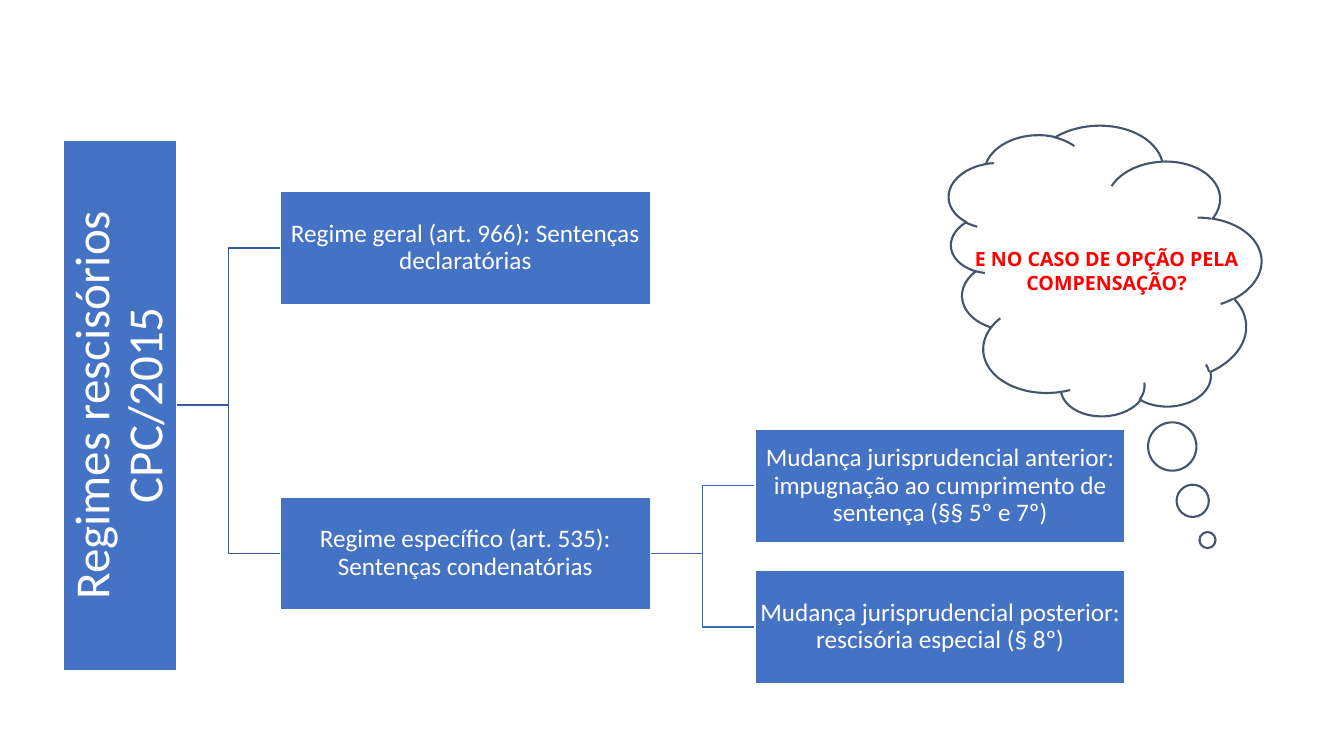
from dataclasses import dataclass

from lxml import etree
from pptx import Presentation
from pptx import util as u
from pptx.dml.color import RGBColor
from pptx.enum import shapes, text
from pptx.oxml import ns

BLUE, WHITE, SLATE, RED = "4472C4", "FFFFFF", "44546A", "FF0000"
ROOT_LINK, LEAF_LINK = "365B9D", "3E67B2"
BOX_W, BOX_H = 3.67, 1.12
LEVEL_1, LEVEL_2 = 2.78, 7.49  # left edges of the two columns of boxes
ROOT_LENGTH, ROOT_RIGHT, ROOT_MIDDLE = 5.26, 1.75, 4.02


@dataclass
class Box:
    wording: str
    left: float
    top: float
    width: float = BOX_W
    height: float = BOX_H
    size: float = 18
    inset: float = 0.01
    rotation: float = 0

    @property
    def middle(self) -> float:
        return self.top + self.height / 2


def color(value: str) -> RGBColor:
    return RGBColor.from_string(value)


def apply(target, values: dict) -> None:
    for name, value in values.items():
        setattr(target, name, value)


def write(frame, wording: str, font: dict, font_color: str, **paragraph_format) -> None:
    apply(frame, {"word_wrap": True, "vertical_anchor": text.MSO_ANCHOR.MIDDLE})
    paragraph = frame.paragraphs[0]
    apply(paragraph, {"alignment": text.PP_ALIGN.CENTER, **paragraph_format})
    run = paragraph.add_run()
    run.text = wording
    apply(run.font, font)
    run.font.color.rgb = color(font_color)


def outline(shape, line_color: str, width: float) -> None:
    shape.line.color.rgb = color(line_color)
    shape.line.width = u.Pt(width)


def draw_box(slide, box: Box) -> None:
    area = (u.Inches(v) for v in (box.left, box.top, box.width, box.height))
    panel = slide.shapes.add_shape(shapes.MSO_SHAPE.RECTANGLE, *area)
    panel.shadow.inherit = False
    panel.rotation = box.rotation
    panel.fill.solid()
    panel.fill.fore_color.rgb = color(BLUE)
    outline(panel, WHITE, 1)
    sides = ("left", "right", "top", "bottom")
    apply(panel.text_frame, {f"margin_{side}": u.Inches(box.inset) for side in sides})
    write(panel.text_frame, box.wording, {"name": "Calibri", "size": u.Pt(box.size)},
          WHITE, line_spacing=0.9)


def draw_link(slide, from_x: float, from_y: float, child: Box, line_color: str) -> None:
    ends = (u.Inches(v) for v in (from_x, from_y, child.left, child.middle))
    link = slide.shapes.add_connector(shapes.MSO_CONNECTOR.ELBOW, *ends)
    outline(link, line_color, 1)
    etree.SubElement(link._element.spPr, ns.qn("a:effectLst"))


def draw_thought(slide) -> None:
    area = (u.Inches(v) for v in (9.53, 1.15, 2.88, 3.07))
    cloud = slide.shapes.add_shape(shapes.MSO_SHAPE.CLOUD_CALLOUT, *area)
    cloud.shadow.inherit = False
    cloud.rotation = 267.2
    cloud.adjustments[0], cloud.adjustments[1] = -0.944, 0.285
    cloud.fill.background()
    outline(cloud, SLATE, 1.5)

    area = (u.Inches(v) for v in (9.13, 2.4, 3.69, 0.57))
    question = slide.shapes.add_textbox(*area)
    write(question.text_frame, "E NO CASO DE OPÇÃO PELA COMPENSAÇÃO?",
          {"name": "Open Sans", "size": u.Pt(14), "bold": True}, RED)


def main() -> None:
    deck = Presentation()
    apply(deck, {"slide_width": u.Inches(13.33), "slide_height": u.Inches(7.5)})
    slide = deck.slides.add_slide(deck.slide_layouts[6])

    # Tree content; the root is a wide box turned on its side
    root = Box("Regimes rescisórios CPC/2015",
               ROOT_RIGHT - (BOX_H + ROOT_LENGTH) / 2, ROOT_MIDDLE - BOX_H / 2,
               width=ROOT_LENGTH, size=35, inset=0.02, rotation=270)
    general = Box("Regime geral (art. 966): Sentenças declaratórias", LEVEL_1, 1.9)
    specific = Box("Regime específico (art. 535): Sentenças condenatórias", LEVEL_1, 4.93)
    earlier = Box("Mudança jurisprudencial anterior: impugnação ao cumprimento "
                  "de sentença (§§ 5º e 7º)", LEVEL_2, 4.26)
    later = Box("Mudança jurisprudencial posterior: rescisória especial (§ 8º)",
                LEVEL_2, 5.66)

    # Links behind the boxes
    for child in (later, earlier):
        draw_link(slide, specific.left + specific.width, specific.middle, child, LEAF_LINK)
    for child in (specific, general):
        draw_link(slide, ROOT_RIGHT, root.middle, child, ROOT_LINK)

    # Boxes
    for box in (root, general, specific, earlier, later):
        draw_box(slide, box)

    # Thought cloud with its question
    draw_thought(slide)
    deck.save("out.pptx")


if __name__ == "__main__":
    main()
